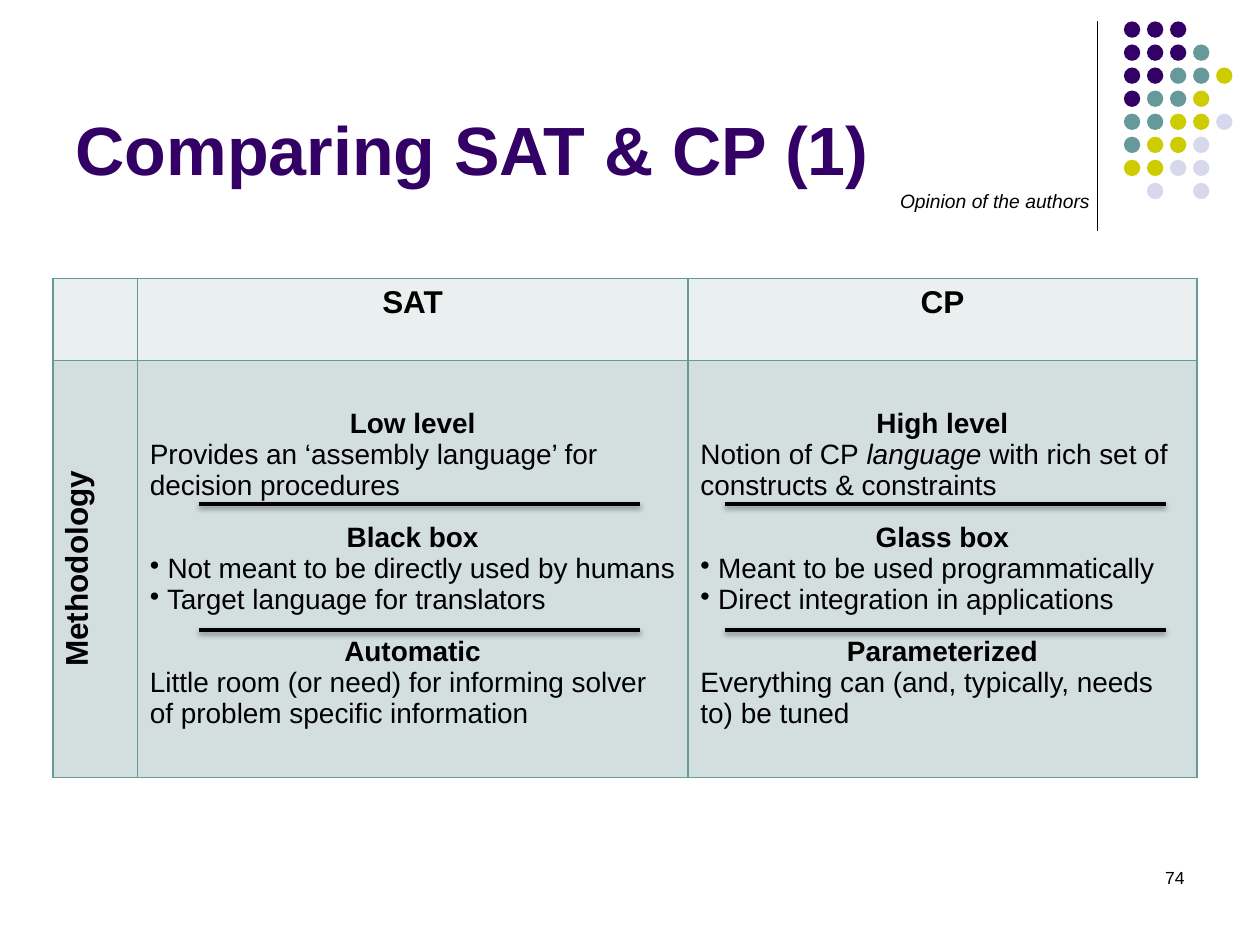
from dataclasses import dataclass
from itertools import product

from lxml.etree import Element, SubElement
from pptx import Presentation
from pptx.dml.color import RGBColor
from pptx.enum.shapes import MSO_CONNECTOR as Connector, MSO_SHAPE as Shape
from pptx.enum.text import MSO_ANCHOR as Anchor, PP_ALIGN as Align
from pptx.oxml.ns import qn
from pptx.util import Inches, Pt

PURPLE = RGBColor(0x33, 0x00, 0x66)
TEAL = RGBColor(0x66, 0x99, 0x99)
OLIVE = RGBColor(0xCC, 0xCC, 0x00)
LAVENDER = RGBColor(0xD8, 0xD8, 0xEC)
BLACK = RGBColor(0x00, 0x00, 0x00)
HEADER_FILL = RGBColor(0xEA, 0xEF, 0xEF)
BODY_FILL = RGBColor(0xD3, 0xDE, 0xDE)

DOT_COLORS = {"P": PURPLE, "T": TEAL, "O": OLIVE, "L": LAVENDER}
DOT_ROWS = ["PPP", "PPPT", "PPTTO", "PTTO", "TTOOL", "TOOL", "OOLL", " L L"]
DOT_LEFT, DOT_TOP, DOT_STEP, DOT_SIZE = 8.92, 0.17, 0.183, 0.13


@dataclass
class Span:
    text: str
    size: float = 16
    bold: bool = False
    italic: bool = False
    color: RGBColor = BLACK


@dataclass
class Para:
    spans: list[Span]
    align: Align = Align.LEFT
    before: float = 0
    bullet: bool = False


def heading(text: str, before: float = 12) -> Para:
    return Para([Span(text, bold=True)], Align.CENTER, before)


def label(text: str) -> Para:
    return Para([Span(text, 18, bold=True)], Align.CENTER)


def body(text: str) -> Para:
    return Para([Span(text)])


def bullet(text: str) -> Para:
    return Para([Span(" " + text)], bullet=True)


SAT = [
    heading("Low level", 0),
    body("Provides an ‘assembly language’ for decision procedures"),
    heading("Black box"),
    bullet("Not meant to be directly used by humans"),
    bullet("Target language for translators"),
    heading("Automatic"),
    body("Little room (or need) for informing solver of problem specific information"),
]
CP = [
    heading("High level", 0),
    Para([Span("Notion of CP"), Span(" language ", italic=True),
          Span("with rich set of constructs & constraints")]),
    heading("Glass box"),
    bullet("Meant to be used programmatically"),
    bullet("Direct integration in applications"),
    heading("Parameterized"),
    body("Everything can (and, typically, needs to) be tuned"),
]
CELLS = [[[], [label("SAT")], [label("CP")]], [[label("Methodology")], SAT, CP]]


def write(frame, paras: list[Para]) -> None:
    for index, item in enumerate(paras):
        para = frame.add_paragraph() if index else frame.paragraphs[0]
        para.alignment = item.align
        para.space_before = Pt(item.before)
        if item.bullet:
            SubElement(para._p.get_or_add_pPr(), qn("a:buChar"), char="•")
        for span in item.spans:
            run = para.add_run()
            run.text = span.text
            formats = {"name": "Arial", "size": Pt(span.size),
                       "bold": span.bold, "italic": span.italic}
            for name, value in formats.items():
                setattr(run.font, name, value)
            run.font.color.rgb = span.color


def add_text(page, left: float, top: float, width: float, height: float,
             para: Para, anchor: Anchor = Anchor.TOP) -> None:
    box = page.shapes.add_textbox(Inches(left), Inches(top), Inches(width), Inches(height))
    box.text_frame.word_wrap = True
    box.text_frame.vertical_anchor = anchor
    write(box.text_frame, [para])


def add_line(page, start: tuple[float, float], end: tuple[float, float],
             width: float, shadow: bool = False) -> None:
    line = page.shapes.add_connector(Connector.STRAIGHT, *map(Inches, start + end))
    line.line.color.rgb = BLACK
    line.line.width = Pt(width)
    effects = SubElement(line._element.spPr, qn("a:effectLst"))
    if shadow:
        outer = SubElement(effects, qn("a:outerShdw"), blurRad=str(Pt(3.1)),
                           dist=str(Pt(1.6)), dir="5400000", rotWithShape="0")
        color = SubElement(outer, qn("a:srgbClr"), val=str(BLACK))
        SubElement(color, qn("a:alpha"), val="38000")


def add_dots(page) -> None:
    for row, codes in enumerate(DOT_ROWS):
        for column, code in enumerate(codes):
            if code == " ":
                continue
            dot = page.shapes.add_shape(
                Shape.OVAL, Inches(DOT_LEFT + column * DOT_STEP),
                Inches(DOT_TOP + row * DOT_STEP), Inches(DOT_SIZE), Inches(DOT_SIZE))
            dot.shadow.inherit = False
            dot.fill.solid()
            dot.fill.fore_color.rgb = DOT_COLORS[code]
            dot.line.fill.background()


def add_borders(cell) -> None:
    properties = cell._tc.get_or_add_tcPr()
    for index, side in enumerate(("lnL", "lnR", "lnT", "lnB")):
        border = Element(qn(f"a:{side}"), w=str(Pt(1)))
        SubElement(SubElement(border, qn("a:solidFill")), qn("a:srgbClr"), val=str(TEAL))
        properties.insert(index, border)


def add_comparison(page) -> None:
    widths, heights = (0.67, 4.37, 4.04), (0.65, 3.31)
    table = page.shapes.add_table(2, 3, Inches(0.42), Inches(2.21), Inches(sum(widths)),
                                  Inches(sum(heights))).table
    for column, width in zip(table.columns, widths):
        column.width = Inches(width)
    for row, height in zip(table.rows, heights):
        row.height = Inches(height)
    for row, column in product(range(2), range(3)):
        cell = table.cell(row, column)
        cell.fill.solid()
        cell.fill.fore_color.rgb = BODY_FILL if row else HEADER_FILL
        cell.vertical_anchor = Anchor.MIDDLE if row and column else Anchor.TOP
        write(cell.text_frame, CELLS[row][column])
        add_borders(cell)
    table.cell(1, 0)._tc.get_or_add_tcPr().set("vert", "vert270")


def main() -> None:
    deck = Presentation()
    deck.slide_width, deck.slide_height = Inches(10), Inches(7.5)
    page = deck.slides.add_slide(deck.slide_layouts[6])
    add_line(page, (8.71, 0.17), (8.71, 1.83), 0.75)
    add_dots(page)
    add_text(page, 0.5, 0.13, 8.25, 1.42,
             Para([Span("Comparing SAT & CP (1)", 39, bold=True, color=PURPLE)]), Anchor.BOTTOM)
    add_comparison(page)
    for left, top in product((1.58, 5.75), (4, 5)):
        add_line(page, (left, top), (left + 3.5, top), 2, shadow=True)
    add_text(page, 7.17, 6.83, 2.33, 0.5, Para([Span("74", 10)], Align.RIGHT))
    add_text(page, 0.58, 1.45, 8.17, 0.29,
             Para([Span("Opinion of the authors", 11, italic=True)], Align.RIGHT))
    deck.save("out.pptx")


if __name__ == "__main__":
    main()
